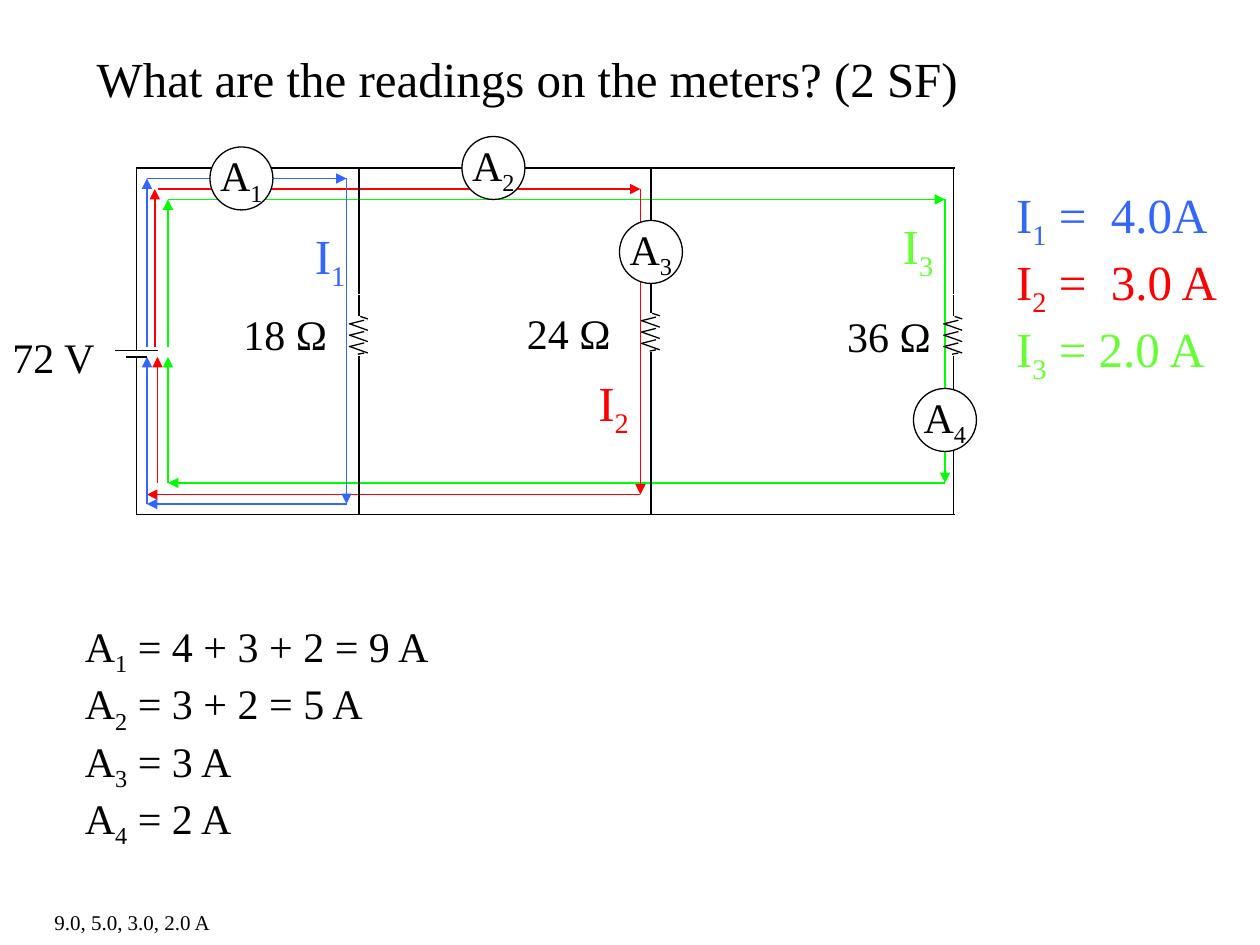
from lxml import etree
from pptx import Presentation
from pptx.dml.color import RGBColor
from pptx.enum.shapes import MSO_CONNECTOR, MSO_SHAPE
from pptx.enum.text import MSO_ANCHOR, MSO_AUTO_SIZE, PP_ALIGN
from pptx.oxml.ns import qn
from pptx.util import Inches, Pt

STRAIGHT = MSO_CONNECTOR.STRAIGHT
OVAL = MSO_SHAPE.OVAL
TOP, MIDDLE = MSO_ANCHOR.TOP, MSO_ANCHOR.MIDDLE
LEFT, CENTER = PP_ALIGN.LEFT, PP_ALIGN.CENTER
GROW, FIXED = MSO_AUTO_SIZE.SHAPE_TO_FIT_TEXT, MSO_AUTO_SIZE.NONE

COLORS = {
    "black": "000000",
    "white": "FFFFFF",
    "blue": "3366FF",
    "red": "FF0000",
    "green": "00FF00",
    "lime": "66FF33",
}


def grid(count):
    """Length of a number of grid cells, twelve to the inch."""
    return Inches(count / 12)


def color(name):
    return RGBColor.from_string(COLORS[name])


class CircuitPage:
    font_name = "Times New Roman"
    line_width = Pt(0.75)

    def __init__(self, deck):
        self.page = deck.slides.add_slide(deck.slide_layouts[5])

    def fill_text(self, shape, lines, size, align=LEFT, anchor=TOP):
        """Each line is (text, subscript, rest, colour)."""
        frame = shape.text_frame
        frame.word_wrap = False
        frame.vertical_anchor = anchor
        for index, (text, subscript, rest, tint) in enumerate(lines):
            para = frame.add_paragraph() if index else frame.paragraphs[0]
            para.alignment = align
            for part, lowered in ((text, False), (subscript, True), (rest, False)):
                if not part:
                    continue
                span = para.add_run()
                span.text = part
                span.font.name = self.font_name
                span.font.size = Pt(size)
                span.font.color.rgb = color(tint)
                if lowered:
                    span._r.get_or_add_rPr().set("baseline", "-25000")

    def title(self, text, area, size):
        box = self.page.shapes.title
        box.left, box.top, box.width, box.height = map(grid, area)
        self.fill_text(box, [(text, "", "", "black")], size)
        box.text_frame.auto_size = FIXED

    def text(self, area, lines, size):
        box = self.page.shapes.add_textbox(*map(grid, area))
        self.fill_text(box, lines, size)
        box.text_frame.auto_size = GROW

    def line(self, start, end, tint="black", arrow=False):
        wire = self.page.shapes.add_connector(STRAIGHT, *map(grid, (*start, *end)))
        wire.line.width = self.line_width
        wire.line.color.rgb = color(tint)
        properties = wire._element.spPr
        if arrow:
            outline = properties.find(qn("a:ln"))
            etree.SubElement(outline, qn("a:tailEnd"), type="triangle")
        etree.SubElement(properties, qn("a:effectLst"))

    def flow(self, points, tint):
        for start, end in zip(points, points[1:]):
            self.line(start, end, tint, arrow=True)

    def resistor(self, x, y):
        strokes = [(0, 0, 0, 2.04), (0.12, 2.04, 0.84, 2.28)]
        for turn in range(3):
            drop = 1.08 * turn
            strokes += [
                (0.48, 2.4 + drop, -0.96, 2.76 + drop),
                (-0.84, 2.76 + drop, 0.84, 3.36 + drop),
            ]
        strokes += [(0.48, 5.52, -0.12, 5.64), (0, 5.76, 0, 7.68)]
        for x1, y1, x2, y2 in strokes:
            self.line((x + x1, y + y1), (x + x2, y + y2))

    def meter(self, left, top, number):
        disc = self.page.shapes.add_shape(OVAL, *map(grid, (left, top, 6, 6)))
        disc.shadow.inherit = False
        disc.fill.solid()
        disc.fill.fore_color.rgb = color("white")
        disc.line.color.rgb = color("black")
        disc.line.width = self.line_width
        self.fill_text(disc, [("A", number, "", "black")], 24, CENTER, MIDDLE)


def main():
    deck = Presentation()
    deck.slide_width, deck.slide_height = Inches(10), Inches(7.5)
    circuit = CircuitPage(deck)
    circuit.title("What are the readings on the meters? (2 SF)", (8, 4, 84.5, 6.8), 28)

    # Current loops, each leg an arrow
    flows = [
        ("green", [(16, 33), (16, 19), (90, 19), (90, 46), (16, 46), (16, 34)]),
        ("red", [(14.75, 33), (14.75, 18)]),
        ("red", [(15, 18), (61, 18), (61, 47.1), (14, 47.1)]),
        ("red", [(15, 46), (15, 34)]),
        ("blue", [(14, 33), (14, 17), (33, 17), (33, 48), (14, 48), (14, 34)]),
    ]
    for tint, points in flows:
        circuit.flow(points, tint)

    # Loop names
    for left, top, number, tint in (
        (84.8, 19.9, "3", "lime"),
        (55.8, 34.9, "2", "red"),
        (28.8, 20.9, "1", "blue"),
    ):
        circuit.text((left, top, 5.5, 6.8), [("I", number, "", tint)], 28)

    # Answers
    circuit.text((95.6, 17, 22.1, 18), [
        ("I", "1", " =  4.0A", "blue"),
        ("I", "2", " =  3.0 A", "red"),
        ("I", "3", " = 2.0 A", "lime"),
    ], 28)
    sums = ["4 + 3 + 2 = 9 A", "3 + 2 = 5 A", "3 A", "2 A"]
    circuit.text((6.9, 58.5, 35.5, 20.4), [
        ("A", str(number), f" = {total}", "black")
        for number, total in enumerate(sums, 1)
    ], 24)
    circuit.text((4, 86, 17.4, 3.6), [("9.0, 5.0, 3.0, 2.0 A", "", "", "black")], 12)

    # Rails and battery
    for y in (16, 49):
        circuit.line((13, y), (91, y))
    circuit.line((11, 33.4), (15, 33.4))
    circuit.line((12, 34), (14, 34))
    circuit.line((13, 33.4), (13, 16))
    circuit.line((13, 49), (13, 34))

    # Branches with their resistors
    for x, y in ((34.2, 28.1), (62, 27.8), (90.8, 28.1)):
        circuit.line((x, 28), (x, 16))
        circuit.resistor(x, y)
        circuit.line((x, 35), (x, 49))

    # Component values
    for left, top, value in (
        (0, 31, "72 V"),
        (22, 28.8, "18 Ω"),
        (49, 28.7, "24 Ω"),
        (79.5, 29, "36 Ω"),
    ):
        circuit.text((left, top, 10.4, 6), [(value, "", "", "black")], 24)

    # Meters
    for left, top, number in ((44, 13, "2"), (20, 14, "1"), (59, 21, "3"), (87, 37, "4")):
        circuit.meter(left, top, number)

    deck.save("out.pptx")


if __name__ == "__main__":
    main()
